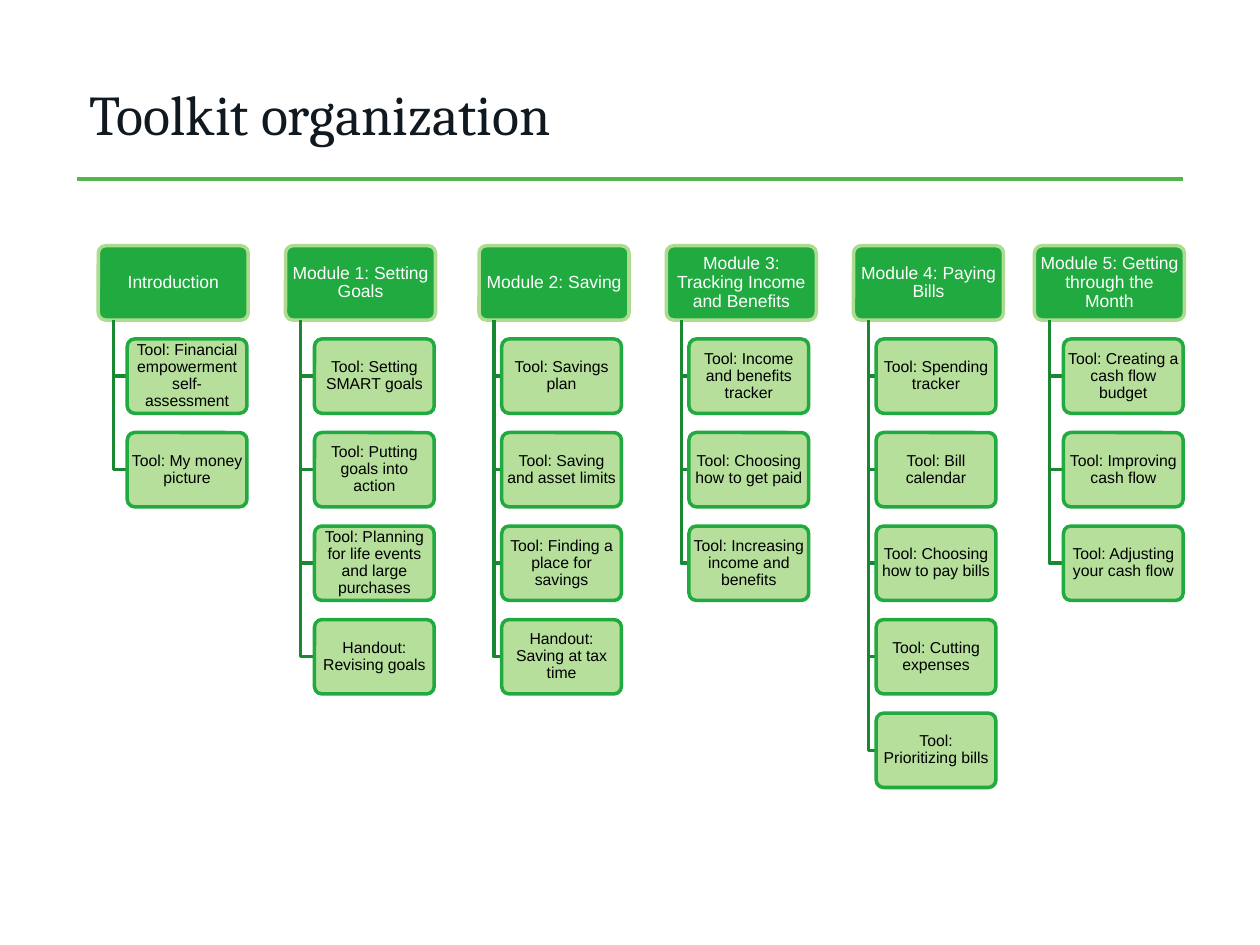
from dataclasses import dataclass

from lxml import etree
from pptx import Presentation
from pptx import util as u
from pptx.dml.color import RGBColor
from pptx.enum import shapes, text
from pptx.oxml import ns

COLORS = {
    "title": "101820",
    "rule": "50B748",
    "head": "20AA3F",
    "tool": "ADDC91",
    "branch": "1A8832",
    "white": "FFFFFF",
    "black": "000000",
}
HEAD_TOP, HEAD_WIDTH, BOX_HEIGHT = 1.95, 1.19, 0.59
TOOL_LEFT, TOOL_TOP, TOOL_WIDTH = 1.01, 2.69, 0.95
COLUMN_PITCH = (8.44 - TOOL_LEFT) / 5
ROW_PITCH = (5.66 - TOOL_TOP) / 4
TRUNK_INSET = 0.12


@dataclass
class Module:
    name: str
    tools: list[str]
    head_overhang: float = 0.23


@dataclass
class BoxStyle:
    fill: str
    line: str
    font_color: str
    size: float
    opacity: int = 100


HEAD = BoxStyle("head", "tool", "white", 10)
TOOL = BoxStyle("tool", "head", "black", 9, opacity=90)

MODULES = [
    Module("Introduction", [
        "Tool: Financial empowerment self-assessment",
        "Tool: My money picture",
    ]),
    Module("Module 1: Setting Goals", [
        "Tool: Setting SMART goals",
        "Tool: Putting goals into action",
        "Tool: Planning for life events and large purchases",
        "Handout: Revising goals",
    ]),
    Module("Module 2: Saving", [
        "Tool: Savings plan",
        "Tool: Saving and asset limits",
        "Tool: Finding a place for savings",
        "Handout: Saving at tax time",
    ], head_overhang=0.18),
    Module("Module 3: Tracking Income and Benefits", [
        "Tool: Income and benefits tracker",
        "Tool: Choosing how to get paid",
        "Tool: Increasing income and benefits",
    ], head_overhang=0.18),
    Module("Module 4: Paying Bills", [
        "Tool: Spending tracker",
        "Tool: Bill calendar",
        "Tool: Choosing how to pay bills",
        "Tool: Cutting expenses",
        "Tool: Prioritizing bills",
    ], head_overhang=0.18),
    Module("Module 5: Getting through the Month", [
        "Tool: Creating a cash flow budget",
        "Tool: Improving cash flow",
        "Tool: Adjusting your cash flow",
    ]),
]


def color(name: str) -> RGBColor:
    return RGBColor.from_string(COLORS[name])


def write_text(shape, content: str, *, font: str, size: float, font_color: str,
               align, spacing: float, margins: tuple[float, float]) -> None:
    frame = shape.text_frame
    frame.word_wrap = True
    frame.auto_size = text.MSO_AUTO_SIZE.NONE
    frame.vertical_anchor = text.MSO_ANCHOR.MIDDLE
    frame.margin_left = frame.margin_right = u.Inches(margins[0])
    frame.margin_top = frame.margin_bottom = u.Inches(margins[1])
    paragraph = frame.paragraphs[0]
    paragraph.alignment = align
    paragraph.line_spacing = spacing
    run = paragraph.add_run()
    run.text = content
    run.font.name = font
    run.font.size = u.Pt(size)
    run.font.color.rgb = color(font_color)


def set_line(shape, name: str) -> None:
    shape.line.color.rgb = color(name)
    shape.line.width = u.Pt(2)


def add_box(slide, content: str, left: float, top: float, width: float,
            style: BoxStyle) -> None:
    shape = slide.shapes.add_shape(
        shapes.MSO_SHAPE.ROUNDED_RECTANGLE, u.Inches(left), u.Inches(top),
        u.Inches(width), u.Inches(BOX_HEIGHT))
    shape.adjustments[0] = 0.1
    shape.shadow.inherit = False
    shape.fill.solid()
    shape.fill.fore_color.rgb = color(style.fill)
    if style.opacity < 100:
        fill_color = shape.fill._xPr.find(".//" + ns.qn("a:srgbClr"))
        alpha = etree.SubElement(fill_color, ns.qn("a:alpha"))
        alpha.set("val", str(style.opacity * 1000))
    set_line(shape, style.line)
    write_text(shape, content, font="Arial", size=style.size,
               font_color=style.font_color, align=text.PP_ALIGN.CENTER,
               spacing=0.9, margins=(0.02, 0.01))


def add_branch(slide, trunk: float, top: float, right: float, bottom: float) -> None:
    builder = slide.shapes.build_freeform(
        u.Inches(trunk), u.Inches(top))
    builder.add_line_segments(
        [(u.Inches(trunk), u.Inches(bottom)), (u.Inches(right), u.Inches(bottom))],
        close=False)
    branch = builder.convert_to_shape()
    branch.shadow.inherit = False
    branch.fill.background()
    set_line(branch, "branch")


def add_module(slide, module: Module, tool_left: float) -> None:
    head_left = tool_left - module.head_overhang
    add_box(slide, module.name, head_left, HEAD_TOP, HEAD_WIDTH, HEAD)
    for row, tool in enumerate(module.tools):
        top = TOOL_TOP + row * ROW_PITCH
        add_branch(slide, head_left + TRUNK_INSET, HEAD_TOP + BOX_HEIGHT,
                   tool_left, top + BOX_HEIGHT / 2)
        add_box(slide, tool, tool_left, top, TOOL_WIDTH, TOOL)


def add_title(slide, content: str) -> None:
    title = slide.shapes.title
    title.left, title.top = u.Inches(0.61), u.Inches(0.49)
    title.width, title.height = u.Inches(8.79), u.Inches(0.81)
    write_text(title, content, font="Cambria", size=32, font_color="title",
               align=text.PP_ALIGN.LEFT, spacing=1.0, margins=(0.1, 0.05))
    rule = slide.shapes.add_connector(
        shapes.MSO_CONNECTOR.STRAIGHT, u.Inches(0.61), u.Inches(1.42),
        u.Inches(9.39), u.Inches(1.42))
    set_line(rule, "rule")
    etree.SubElement(rule._element.spPr, ns.qn("a:effectLst"))


def main() -> None:
    presentation = Presentation()
    presentation.slide_width = u.Inches(10)
    presentation.slide_height = u.Inches(7.5)
    slide = presentation.slides.add_slide(presentation.slide_layouts[5])
    add_title(slide, "Toolkit organization")
    for column, module in enumerate(MODULES):
        add_module(slide, module, TOOL_LEFT + column * COLUMN_PITCH)
    presentation.save("out.pptx")


if __name__ == "__main__":
    main()
